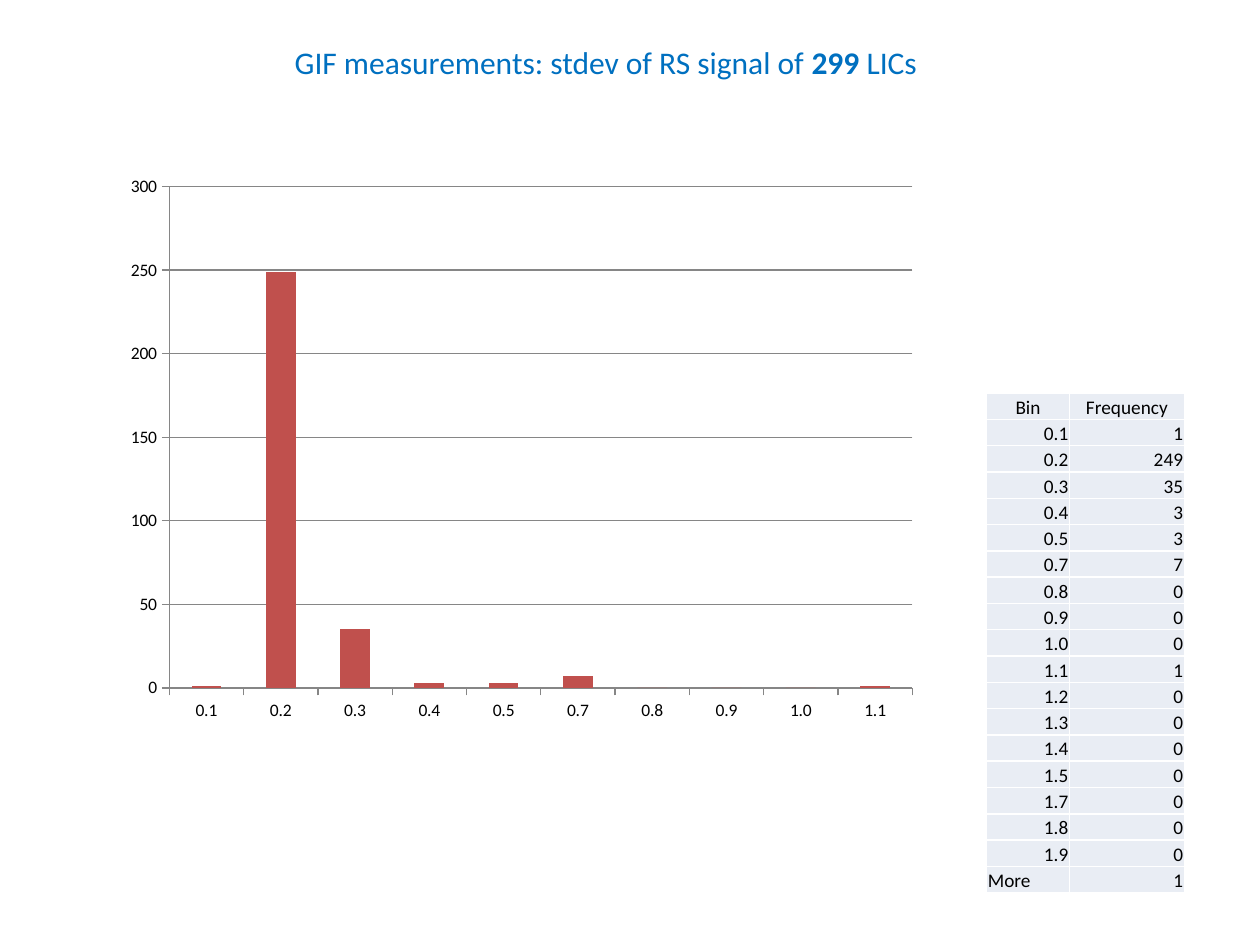
from lxml.etree import SubElement
from pptx import Presentation
from pptx.chart.data import CategoryChartData
from pptx.dml.color import RGBColor
from pptx.enum.chart import XL_CHART_TYPE, XL_TICK_MARK
from pptx.enum.text import MSO_ANCHOR, MSO_AUTO_SIZE, PP_ALIGN
from pptx.oxml.ns import qn
from pptx.util import Inches, Pt

BLUE = RGBColor(0x00, 0x70, 0xC0)
RED = RGBColor(0xC0, 0x50, 0x4D)
GRAY = RGBColor(0x86, 0x86, 0x86)
BLACK = RGBColor(0x00, 0x00, 0x00)
CELL = RGBColor(0xE9, 0xED, 0xF4)
WHITE = RGBColor(0xFF, 0xFF, 0xFF)

FONT = "Calibri"
WIDTH, HEIGHT = Inches(10), Inches(7.5)
CHARTED = 10  # number of leading bins shown in the chart

TITLE = [("GIF measurements: stdev of RS signal of ", False), ("299", True), (" LICs", False)]
HISTOGRAM = [
    ("0.1", 1), ("0.2", 249), ("0.3", 35), ("0.4", 3), ("0.5", 3), ("0.7", 7),
    ("0.8", 0), ("0.9", 0), ("1.0", 0), ("1.1", 1), ("1.2", 0), ("1.3", 0),
    ("1.4", 0), ("1.5", 0), ("1.7", 0), ("1.8", 0), ("1.9", 0), ("More", 1),
]


def share(left, top, width, height):
    """Turn shares of the slide's size into a box."""
    return int(left * WIDTH), int(top * HEIGHT), int(width * WIDTH), int(height * HEIGHT)


def style_font(font, size, color, bold=False):
    for name, value in {"name": FONT, "size": Pt(size), "bold": bold}.items():
        setattr(font, name, value)
    font.color.rgb = color


def add_title(s, box):
    tf = s.shapes.add_textbox(*box).text_frame
    tf.word_wrap = False
    tf.auto_size = MSO_AUTO_SIZE.SHAPE_TO_FIT_TEXT
    for text, bold in TITLE:
        r = tf.paragraphs[0].add_run()
        r.text = text
        style_font(r.font, 18, BLUE, bold)


def add_histogram(s, box):
    data = CategoryChartData()
    bins, counts = zip(*HISTOGRAM[:CHARTED])
    data.categories = bins
    data.add_series("Frequency", counts)
    chart = s.shapes.add_chart(XL_CHART_TYPE.COLUMN_CLUSTERED, *box, data).chart
    chart.has_legend = chart.has_title = False
    style_font(chart.font, 10, BLACK)

    plot = chart.plots[0]
    plot.gap_width = 150
    plot.vary_by_categories = False
    fill = plot.series[0].format.fill
    fill.solid()
    fill.fore_color.rgb = RED

    counts_axis = chart.value_axis
    counts_axis.minimum_scale, counts_axis.maximum_scale, counts_axis.major_unit = 0, 300, 50
    counts_axis.has_major_gridlines = True
    for axis in (chart.category_axis, counts_axis):
        axis.major_tick_mark = XL_TICK_MARK.OUTSIDE
        axis.minor_tick_mark = XL_TICK_MARK.NONE
    for part in (chart.category_axis, counts_axis, counts_axis.major_gridlines):
        part.format.line.color.rgb = GRAY
        part.format.line.width = Pt(0.75)


def add_borders(cell):
    tc_pr = cell._tc.get_or_add_tcPr()
    for i, side in enumerate(("lnL", "lnR", "lnT", "lnB")):
        line = tc_pr.makeelement(qn(f"a:{side}"), {"w": str(Pt(1))})
        tc_pr.insert(i, line)  # borders come before the fill
        fill = SubElement(line, qn("a:solidFill"))
        SubElement(fill, qn("a:srgbClr"), val=str(WHITE))


def fill_cell(cell, text, align):
    margins = {"margin_left": 0.01, "margin_right": 0.01, "margin_top": 0.01, "margin_bottom": 0}
    for name, value in margins.items():
        setattr(cell, name, Inches(value))
    cell.vertical_anchor = MSO_ANCHOR.BOTTOM
    cell.fill.solid()
    cell.fill.fore_color.rgb = CELL
    add_borders(cell)
    p = cell.text_frame.paragraphs[0]
    p.alignment = align
    r = p.add_run()
    r.text = str(text)
    style_font(r.font, 11, BLACK)


def add_frequency_table(s, box):
    rows = [("Bin", "Frequency")] + HISTOGRAM
    table = s.shapes.add_table(len(rows), 2, *box).table
    table.first_row = table.horz_banding = False
    width, height = box[2:]
    table.columns[0].width = int(width * 0.42)
    table.columns[1].width = width - table.columns[0].width
    for i, row in enumerate(rows):
        table.rows[i].height = height // len(rows)
        for j, text in enumerate(row):
            align = PP_ALIGN.CENTER if i == 0 else PP_ALIGN.RIGHT
            if text == "More":
                align = PP_ALIGN.LEFT
            fill_cell(table.cell(i, j), text, align)


def main():
    prs = Presentation()
    prs.slide_width, prs.slide_height = WIDTH, HEIGHT
    s = prs.slides.add_slide(prs.slide_layouts[6])
    add_histogram(s, share(0.091, 0.175, 0.646, 0.599))
    add_title(s, share(0.224, 0.039, 0.532, 0.053))
    add_frequency_table(s, share(0.783, 0.416, 0.157, 0.529))
    prs.save("out.pptx")


if __name__ == "__main__":
    main()
